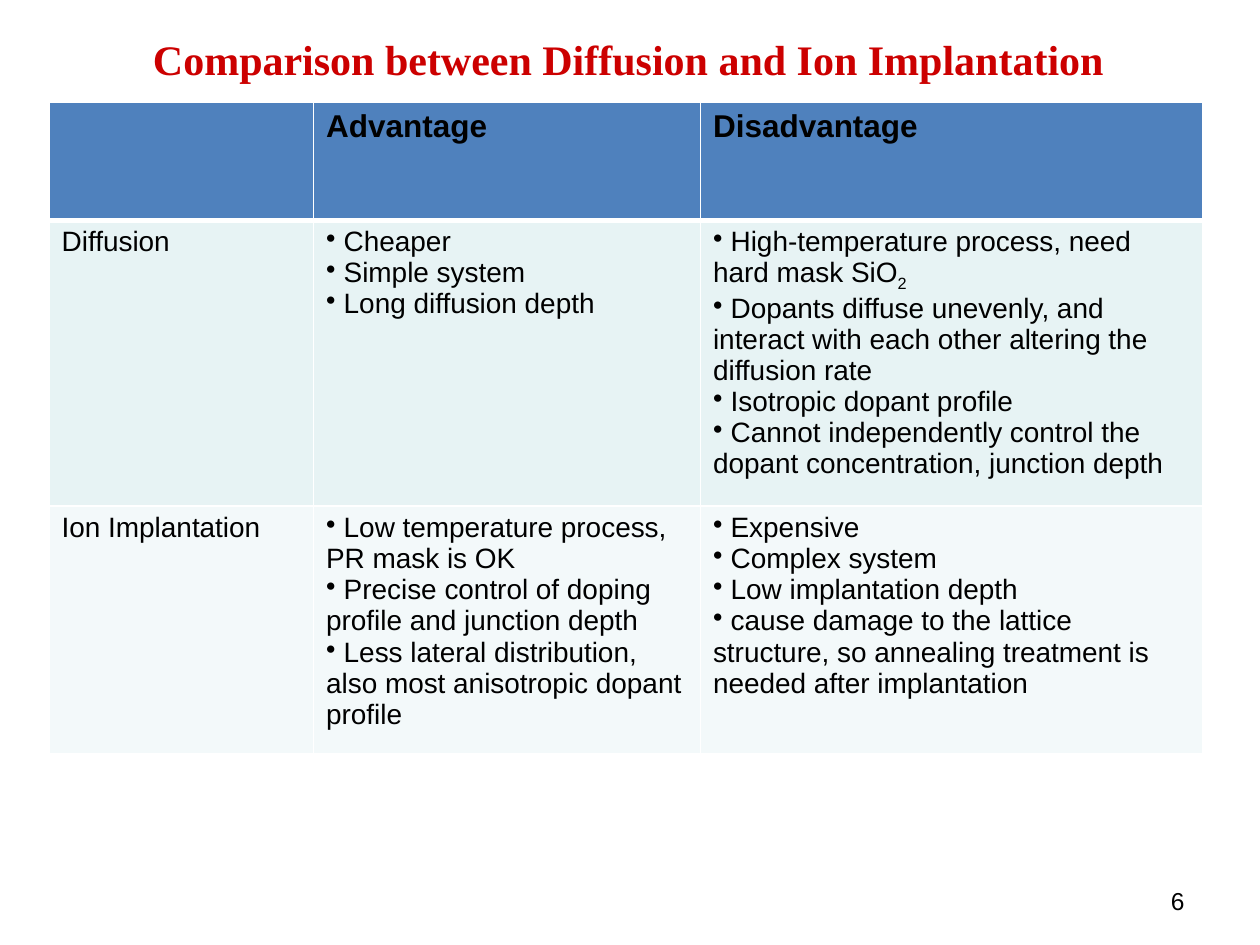
import pptx
import pptx.dml.color
import pptx.enum.text
import pptx.oxml
import pptx.oxml.ns
import pptx.util
from pptx.util import Cm

COLORS = {"title": "CC0000", "text": "000000", "border": "FFFFFF",
          "header": "4F81BD", "diffusion": "E7F3F4", "implantation": "F3F9FA"}
ALIGN = pptx.enum.text.PP_ALIGN
ANCHOR = pptx.enum.text.MSO_ANCHOR


def style(paragraph, size, color="text", font="Arial", bold=False):
    paragraph.font.size = pptx.util.Pt(size)
    paragraph.font.name = font
    paragraph.font.bold = bold
    paragraph.font.color.rgb = pptx.dml.color.RGBColor.from_string(COLORS[color])


def add_border(cell, side, width):
    """Draw one edge of a cell; side is L, R, T or B, width is in points."""
    cell._tc.get_or_add_tcPr().append(pptx.oxml.parse_xml(
        f'<a:ln{side} {pptx.oxml.ns.nsdecls("a")} w="{width * 12700}"><a:solidFill>'
        f'<a:srgbClr val="{COLORS["border"]}"/></a:solidFill></a:ln{side}>'))


prs = pptx.Presentation()
prs.slide_width, prs.slide_height = Cm(25.4), Cm(19.05)
slide = prs.slides.add_slide(prs.slide_layouts[6])

title = slide.shapes.add_textbox(Cm(2.08), Cm(0.56), Cm(21.39), Cm(1.3)).text_frame
title.word_wrap = True
title.text = "Comparison between Diffusion and Ion Implantation "
title.paragraphs[0].alignment = ALIGN.CENTER
style(title.paragraphs[0], 24, "title", "Times New Roman", True)

page_number = slide.shapes.add_textbox(Cm(18.21), Cm(17.65), Cm(5.92), Cm(1.02)).text_frame
page_number.word_wrap = True
page_number.vertical_anchor = ANCHOR.MIDDLE
page_number.text = "6"
page_number.paragraphs[0].alignment = ALIGN.RIGHT
style(page_number.paragraphs[0], 14)

# A cell is a list of paragraphs; "_" marks the start of a subscript.
rows = [
    ("header", 2.38, [[], ["Advantage"], ["Disadvantage"]]),
    ("diffusion", 5.67, [
        ["Diffusion"],
        ["Cheaper", "Simple system", "Long diffusion depth"],
        ["High-temperature process, need hard mask SiO_2",
         "Dopants diffuse unevenly, and interact with each other altering the diffusion rate",
         "Isotropic dopant profile",
         "Cannot independently control the dopant concentration, junction depth"]]),
    ("implantation", 5.0, [
        ["Ion Implantation"],
        ["Low temperature process, PR mask is OK",
         "Precise control of doping profile and junction depth",
         "Less lateral distribution, also most anisotropic dopant profile"],
        ["Expensive", "Complex system", "Low implantation depth",
         "cause damage to the lattice structure, so annealing treatment is needed "
         "after implantation"]]),
]
column_widths = [5.33, 7.8, 10.13]

comparison = slide.shapes.add_table(len(rows), len(column_widths), Cm(0.99), Cm(2.06),
                                    Cm(sum(column_widths)), Cm(13.05)).table
for column, width in zip(comparison.columns, column_widths):
    column.width = Cm(width)

for r, (row_name, height, cells) in enumerate(rows):
    comparison.rows[r].height = Cm(height)
    is_header = r == 0
    for c, lines in enumerate(cells):
        cell = comparison.cell(r, c)
        for side in "LRTB":
            under_header = (side == "B" and r == 0) or (side == "T" and r == 1)
            add_border(cell, side, 3 if under_header else 1)
        cell.fill.solid()
        cell.fill.fore_color.rgb = pptx.dml.color.RGBColor.from_string(COLORS[row_name])
        bulleted = not is_header and c > 0
        for i, line in enumerate(lines):
            paragraph = cell.text_frame.paragraphs[0] if i == 0 else cell.text_frame.add_paragraph()
            if bulleted:
                properties = paragraph._p.get_or_add_pPr()
                properties.set("marL", "0")
                properties.set("indent", "0")
                properties.append(pptx.oxml.parse_xml(
                    f'<a:buChar {pptx.oxml.ns.nsdecls("a")} char="•"/>'))
            main, _, subscript = line.partition("_")
            paragraph.add_run().text = " " + main if bulleted else main
            if subscript:
                run = paragraph.add_run()
                run.text = subscript
                run._r.get_or_add_rPr().set("baseline", "-25000")
            style(paragraph, 18 if is_header else 16, bold=is_header)

prs.save("out.pptx")
